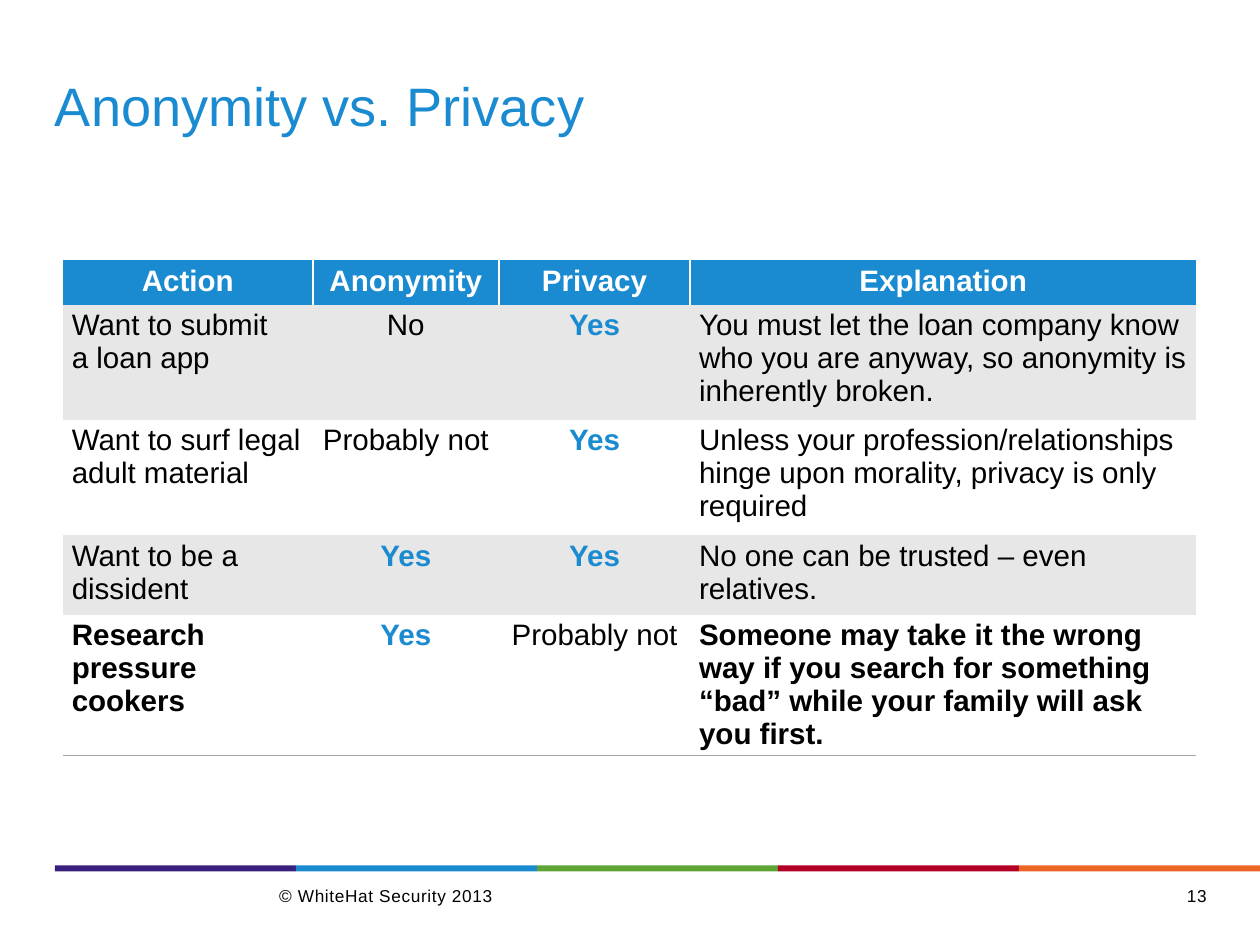
from lxml.etree import SubElement
from pptx import Presentation
from pptx.dml.color import RGBColor
from pptx.enum.shapes import MSO_SHAPE
from pptx.enum.text import MSO_ANCHOR, MSO_AUTO_SIZE, PP_ALIGN
from pptx.oxml.ns import qn
from pptx.util import Inches, Pt

COLORS = {
    "purple": "38207C", "blue": "1A8BD0", "green": "5EA536", "red": "B30027",
    "orange": "ED6525", "black": "000000", "white": "FFFFFF",
    "band": "E7E7E7", "rule": "A6A6A6",
}
PLAIN_TABLE_STYLE = "{2D5ABB26-0587-4C30-8999-92F81FD0307C}"
COLUMN_WIDTHS = [2.82, 2.1, 2.16, 5.71]
ROW_HEIGHTS = [0.5, 1.3, 1.3, 0.9, 1.3]
ROWS = [
    ["Action", "Anonymity", "Privacy", "Explanation"],
    ["Want to submit\na loan app", "No", "Yes",
     "You must let the loan company know who you are anyway, "
     "so anonymity is inherently broken."],
    ["Want to surf legal adult material", "Probably not", "Yes",
     "Unless your profession/relationships hinge upon morality, "
     "privacy is only required"],
    ["Want to be a dissident", "Yes", "Yes",
     "No one can be trusted – even relatives."],
    ["Research pressure cookers", "Yes", "Probably not",
     "Someone may take it the wrong way if you search for something "
     "“bad” while your family will ask you first."],
]


def color(name):
    return RGBColor.from_string(COLORS[name])


def write_text(frame, text, size=24, ink="black", bold=False,
               align=PP_ALIGN.LEFT, spacing=0):
    paragraph = frame.paragraphs[0]
    paragraph.text = text
    paragraph.alignment = align
    for run in paragraph.runs:
        run.font.name = "Arial"
        run.font.size = Pt(size)
        run.font.bold = bold
        run.font.color.rgb = color(ink)
        if spacing:
            run._r.get_or_add_rPr().set("spc", str(int(spacing * 100)))


def add_border(cell, side, ink, width):
    line = SubElement(cell._tc.get_or_add_tcPr(), qn(f"a:ln{side}"),
                      w=str(Pt(width)))
    fill = SubElement(line, qn("a:solidFill"))
    SubElement(fill, qn("a:srgbClr"), val=COLORS[ink])


class SlideBuilder:
    """Holds the slide being built and the house style."""

    def __init__(self, slide):
        self.slide = slide

    def prepare_frame(self, shape, anchor):
        frame = shape.text_frame
        frame.word_wrap = True
        frame.auto_size = MSO_AUTO_SIZE.NONE
        frame.vertical_anchor = anchor
        frame.margin_left = frame.margin_right = 0
        frame.margin_top = frame.margin_bottom = 0
        return frame

    def title(self, text, left, top, width, height):
        shape = self.slide.shapes.title
        shape.left, shape.top = Inches(left), Inches(top)
        shape.width, shape.height = Inches(width), Inches(height)
        frame = self.prepare_frame(shape, MSO_ANCHOR.MIDDLE)
        write_text(frame, text, size=44, ink="blue")

    def footer(self, text, left, width, align=PP_ALIGN.LEFT):
        shape = self.slide.shapes.add_textbox(
            Inches(left), Inches(10), Inches(width), Inches(0.41))
        frame = self.prepare_frame(shape, MSO_ANCHOR.TOP)
        write_text(frame, text, size=14, align=align, spacing=0.5)

    def stripe(self, names, left, top, width, height):
        for index, name in enumerate(names):
            shape = self.slide.shapes.add_shape(
                MSO_SHAPE.RECTANGLE, Inches(left + index * width),
                Inches(top), Inches(width), Inches(height))
            shape.shadow.inherit = False
            shape.fill.solid()
            shape.fill.fore_color.rgb = color(name)
            shape.line.fill.background()

    def table(self, rows, left, top):
        frame = self.slide.shapes.add_table(
            len(rows), len(COLUMN_WIDTHS), Inches(left), Inches(top),
            Inches(sum(COLUMN_WIDTHS)), Inches(sum(ROW_HEIGHTS)))
        table = frame.table
        table._tbl.tblPr.find(qn("a:tableStyleId")).text = PLAIN_TABLE_STYLE
        table.horz_banding = False
        for column, width in zip(table.columns, COLUMN_WIDTHS):
            column.width = Inches(width)
        for row, height in zip(table.rows, ROW_HEIGHTS):
            row.height = Inches(height)
        for row, texts in enumerate(rows):
            for column, text in enumerate(texts):
                self.cell(table, row, column, text)

    def cell(self, table, row, column, text):
        cell = table.cell(row, column)
        header, last = row == 0, row == len(table.rows) - 1
        outer = column in (0, len(table.columns) - 1)
        if header and column > 0:
            add_border(cell, "L", "white", 2.25)
        if header and column < len(table.columns) - 1:
            add_border(cell, "R", "white", 2.25)
        if last:
            add_border(cell, "B", "rule", 1)
        cell.fill.solid()
        cell.fill.fore_color.rgb = color(
            "blue" if header else "band" if row % 2 else "white")
        yes = text == "Yes"
        write_text(
            cell.text_frame, text,
            ink="white" if header else "blue" if yes else "black",
            bold=header or yes or (last and outer),
            align=PP_ALIGN.CENTER if header or not outer else PP_ALIGN.LEFT)


def main():
    presentation = Presentation()
    presentation.slide_width = Inches(14.22)
    presentation.slide_height = Inches(10.67)
    layout = presentation.slide_layouts.get_by_name("Title Only")
    builder = SlideBuilder(presentation.slides.add_slide(layout))
    builder.stripe(["purple", "blue", "green", "red", "orange"],
                   0.62, 9.77, 2.72, 0.07)
    builder.title("Anonymity vs. Privacy", 0.62, 0.74, 13, 0.88)
    builder.footer("© WhiteHat Security 2013", 3.15, 6.08)
    builder.footer("13", 10.58, 3.04, align=PP_ALIGN.RIGHT)
    builder.table(ROWS, 0.71, 2.94)
    presentation.save("out.pptx")


if __name__ == "__main__":
    main()
